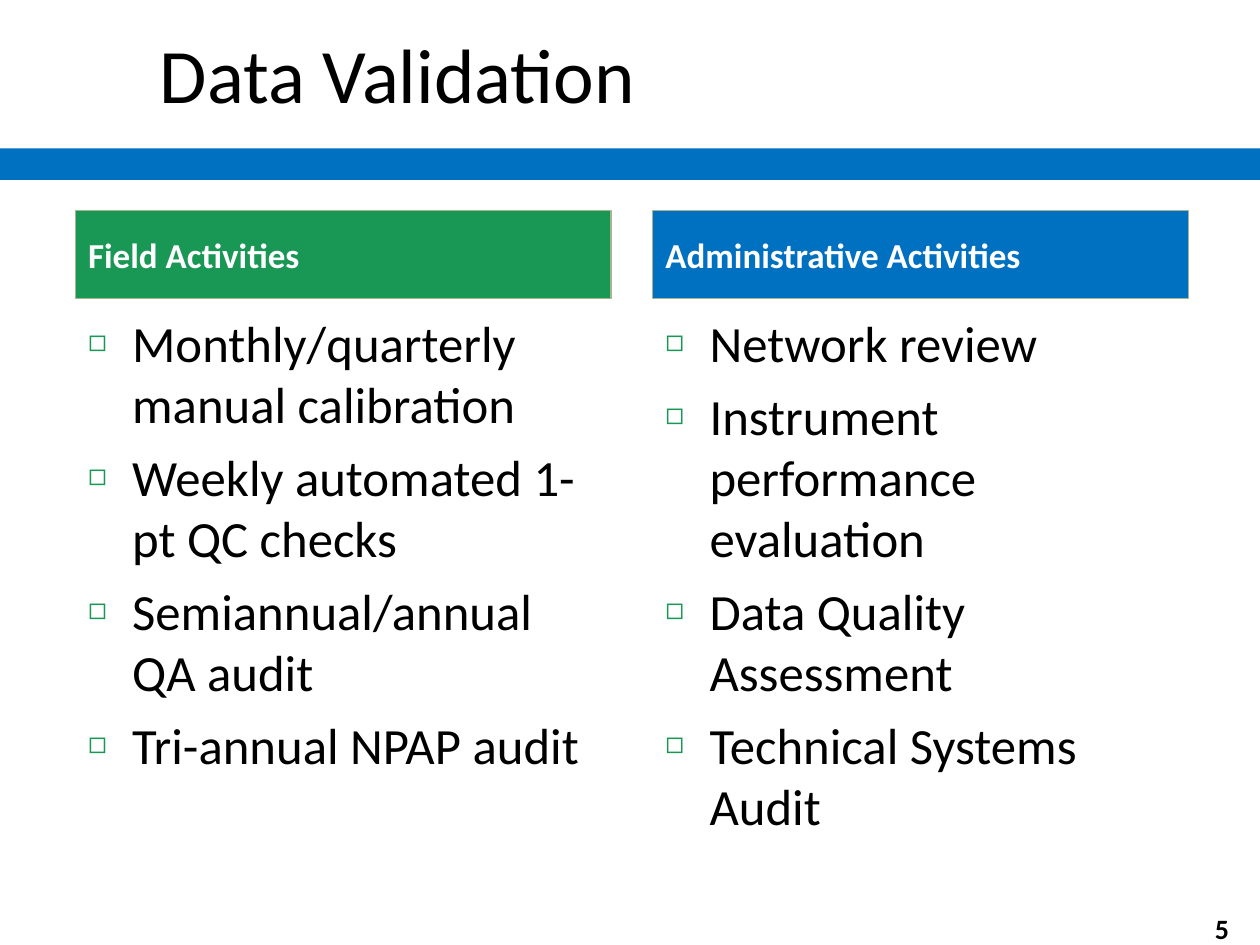
from lxml.etree import SubElement
from pptx import Presentation
from pptx.dml.color import RGBColor
from pptx.enum.shapes import MSO_SHAPE
from pptx.enum.text import MSO_ANCHOR, MSO_AUTO_SIZE, PP_ALIGN
from pptx.oxml.ns import qn
from pptx.util import Cm, Pt

GREEN, BLUE, BLACK, WHITE = "199755", "0070C0", "000000", "FFFFFF"
COLUMN_WIDTH = 10.8
COLUMNS = [
    (1.52, GREEN, "Field Activities", [
        "Monthly/quarterly manual calibration",
        "Weekly automated 1-pt QC checks",
        "Semiannual/annual QA audit",
        "Tri-annual NPAP audit",
    ]),
    (13.16, BLUE, "Administrative Activities", [
        "Network review",
        "Instrument performance evaluation",
        "Data Quality Assessment",
        "Technical Systems Audit",
    ]),
]


def color(value):
    return RGBColor.from_string(value)


def apply_format(target, values):
    for name, value in values.items():
        setattr(target, name, value)


def place(shape, left, top, width, height):
    position = {"left": left, "top": top, "width": width, "height": height}
    apply_format(shape, {name: Cm(value) for name, value in position.items()})


def paint(shape, fill):
    shape.fill.solid()
    shape.fill.fore_color.rgb = color(fill)


def add_bullet(paragraph):
    properties = paragraph._p.get_or_add_pPr()
    properties.set("marL", str(Cm(0.89)))
    properties.set("indent", str(-Cm(0.89)))
    bullet_color = SubElement(properties, qn("a:buClr"))
    SubElement(bullet_color, qn("a:srgbClr"), val=GREEN)
    SubElement(properties, qn("a:buSzPct"), val="60000")
    SubElement(properties, qn("a:buChar"), char="◻")


def write(shape, lines, size, font_color=BLACK, bold=False,
          anchor=MSO_ANCHOR.MIDDLE, alignment=PP_ALIGN.LEFT, bullets=False):
    frame = shape.text_frame
    apply_format(frame, {"word_wrap": True, "auto_size": MSO_AUTO_SIZE.NONE,
                         "vertical_anchor": anchor})
    for index, line in enumerate(lines):
        paragraph = frame.add_paragraph() if index else frame.paragraphs[0]
        if bullets:
            add_bullet(paragraph)
        apply_format(paragraph, {"alignment": alignment,
                                 "space_before": Pt(7 if index else 0)})
        run = paragraph.add_run()
        run.text = line
        apply_format(run.font, {"name": "Calibri", "size": Pt(size), "bold": bold})
        run.font.color.rgb = color(font_color)


def add_band(slide):
    band = slide.shapes.add_shape(MSO_SHAPE.RECTANGLE, 0, Cm(2.99), Cm(25.4), Cm(0.64))
    band.shadow.inherit = False
    paint(band, BLUE)
    band.line.fill.background()


def fill_title(slide, text):
    title = slide.shapes.title
    place(title, 2.97, 0.1, 22, 2.74)
    write(title, [text], 44)


def fill_column(header, body, left, fill, heading, items):
    place(header, left, 4.24, COLUMN_WIDTH, 1.78)
    paint(header, fill)
    header.line.color.rgb = color("A5B592")
    header.line.width = Pt(0.75)
    write(header, [heading], 20, WHITE, bold=True)
    place(body, left, 6.15, COLUMN_WIDTH, 9.96)
    write(body, items, 29, anchor=MSO_ANCHOR.TOP, bullets=True)


def add_page_number(slide, number):
    box = slide.shapes.add_textbox(Cm(23.9), Cm(18.36), Cm(1.47), Cm(0.69))
    write(box, [number], 16, bold=True, alignment=PP_ALIGN.CENTER)


def main():
    presentation = Presentation()
    presentation.slide_width, presentation.slide_height = Cm(25.4), Cm(19.05)
    slide = presentation.slides.add_slide(presentation.slide_layouts.get_by_name("Comparison"))
    add_band(slide)
    fill_title(slide, "Data Validation")
    placeholders = list(slide.placeholders)[1:]
    for header, body, column in zip(placeholders[::2], placeholders[1::2], COLUMNS):
        fill_column(header, body, *column)
    add_page_number(slide, "5")
    presentation.save("out.pptx")


if __name__ == "__main__":
    main()
